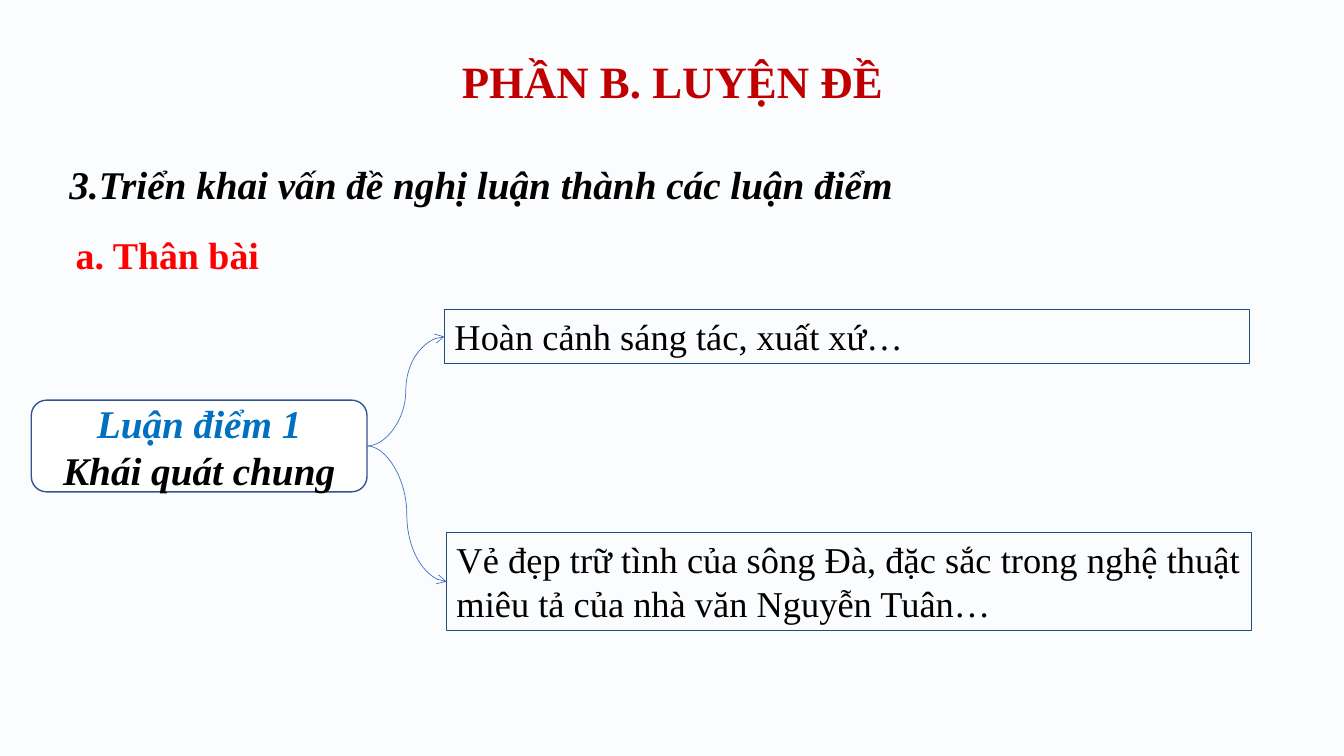
from dataclasses import dataclass

from lxml import etree
from pptx import Presentation
from pptx.dml.color import RGBColor
from pptx.enum.shapes import MSO_CONNECTOR, MSO_SHAPE
from pptx.enum.text import MSO_ANCHOR, PP_ALIGN
from pptx.oxml.ns import qn
from pptx.util import Inches, Pt

RECTANGLE, ROUNDED = MSO_SHAPE.RECTANGLE, MSO_SHAPE.ROUNDED_RECTANGLE
CURVE = MSO_CONNECTOR.CURVE
TOP, MIDDLE = MSO_ANCHOR.TOP, MSO_ANCHOR.MIDDLE
CENTER, JUSTIFY = PP_ALIGN.CENTER, PP_ALIGN.JUSTIFY

FONT = "Times New Roman"
WIDTH, HEIGHT = Inches(13.33), Inches(7.5)
COLORS = {
    "page": "FBFCFE",
    "title": "C00000",
    "section": "FF0000",
    "topic": "0070C0",
    "text": "000000",
    "white": "FFFFFF",
    "topic_line": "325491",
    "detail_line": "1F4E79",
    "arrow": "4472C4",
}


@dataclass(frozen=True)
class Area:
    """Position and size in percent of the slide."""
    left: float
    top: float
    width: float
    height: float


@dataclass(frozen=True)
class Style:
    size: float
    bold: bool = False
    italic: bool = False
    align: PP_ALIGN = CENTER
    anchor: MSO_ANCHOR = TOP
    spacing: float = 1.0
    wrap: bool = True


@dataclass(frozen=True)
class Label:
    area: Area
    lines: tuple[tuple[str, str], ...]  # text and colour name
    style: Style


@dataclass(frozen=True)
class Frame:
    label: Label
    preset: MSO_SHAPE
    line: str
    line_width: float
    fill: str | None = None


DETAIL = Style(26, align=JUSTIFY)

LABELS = (
    Label(Area(6.9, 5.33, 86.27, 11.47), (("PHẦN B. LUYỆN ĐỀ", "title"),),
          Style(32, bold=True, anchor=MIDDLE, spacing=0.9)),
    Label(Area(4.43, 17.47, 89.87, 9.6),
          (("3.Triển khai vấn đề nghị luận thành các luận điểm", "text"),),
          Style(28, bold=True, italic=True, align=JUSTIFY, spacing=1.5)),
    Label(Area(4.8, 30, 15.3, 7.47), (("a. Thân bài", "section"),),
          Style(27, bold=True, wrap=False)),
)

TOPIC = Frame(
    Label(Area(2.33, 52.93, 24.98, 12.13),
          (("Luận điểm 1", "topic"), ("Khái quát chung", "text")),
          Style(28, bold=True, italic=True, anchor=MIDDLE)),
    ROUNDED, "topic_line", 1, "white")

DETAILS = tuple(
    Frame(Label(area, ((text, "text"),), DETAIL), RECTANGLE, "detail_line", 0.75)
    for area, text in (
        (Area(33.08, 40.93, 59.86, 7.2), "Hoàn cảnh sáng tác, xuất xứ…"),
        (Area(33.23, 70.4, 59.86, 13.07),
         "Vẻ đẹp trữ tình của sông Đà, đặc sắc trong nghệ thuật "
         "miêu tả của nhà văn Nguyễn Tuân…"),
    )
)


def color(name: str) -> RGBColor:
    return RGBColor.from_string(COLORS[name])


def place(area: Area) -> tuple[int, int, int, int]:
    return (round(WIDTH * area.left / 100), round(HEIGHT * area.top / 100),
            round(WIDTH * area.width / 100), round(HEIGHT * area.height / 100))


def write(box, label: Label) -> None:
    style, frame = label.style, box.text_frame
    frame.text = "\n".join(text for text, _ in label.lines)
    frame.word_wrap = style.wrap
    frame.vertical_anchor = style.anchor
    for para, (_, color_name) in zip(frame.paragraphs, label.lines):
        para.alignment = style.align
        para.line_spacing = style.spacing
        for span in para.runs:
            font = span.font
            font.name, font.size = FONT, Pt(style.size)
            font.bold, font.italic = style.bold, style.italic
            font.color.rgb = color(color_name)


def draw_label(page, label: Label) -> None:
    write(page.shapes.add_textbox(*place(label.area)), label)


def draw_frame(page, frame: Frame):
    box = page.shapes.add_shape(frame.preset, *place(frame.label.area))
    box.shadow.inherit = False
    if frame.fill:
        box.fill.solid()
        box.fill.fore_color.rgb = color(frame.fill)
    else:
        box.fill.background()
    box.line.color.rgb = color(frame.line)
    box.line.width = Pt(frame.line_width)
    write(box, frame.label)
    return box


def draw_arrow(page, start, end) -> None:
    """Curve from the right middle of one box to the left middle of another."""
    arrow = page.shapes.add_connector(
        CURVE, start.left + start.width, start.top + start.height // 2,
        end.left, end.top + end.height // 2)
    arrow.line.color.rgb = color("arrow")
    arrow.line.width = Pt(0.5)
    etree.SubElement(arrow.line._get_or_add_ln(), qn("a:tailEnd"), type="arrow")
    etree.SubElement(arrow._element.spPr, qn("a:effectLst"))


def main() -> None:
    deck = Presentation()
    deck.slide_width, deck.slide_height = WIDTH, HEIGHT
    page = deck.slides.add_slide(deck.slide_layouts[6])
    page.background.fill.solid()
    page.background.fill.fore_color.rgb = color("page")

    # Title and headings
    for label in LABELS:
        draw_label(page, label)

    # Topic with an arrow to each detail
    topic = draw_frame(page, TOPIC)
    for detail in DETAILS:
        draw_arrow(page, topic, draw_frame(page, detail))

    deck.save("out.pptx")


if __name__ == "__main__":
    main()
